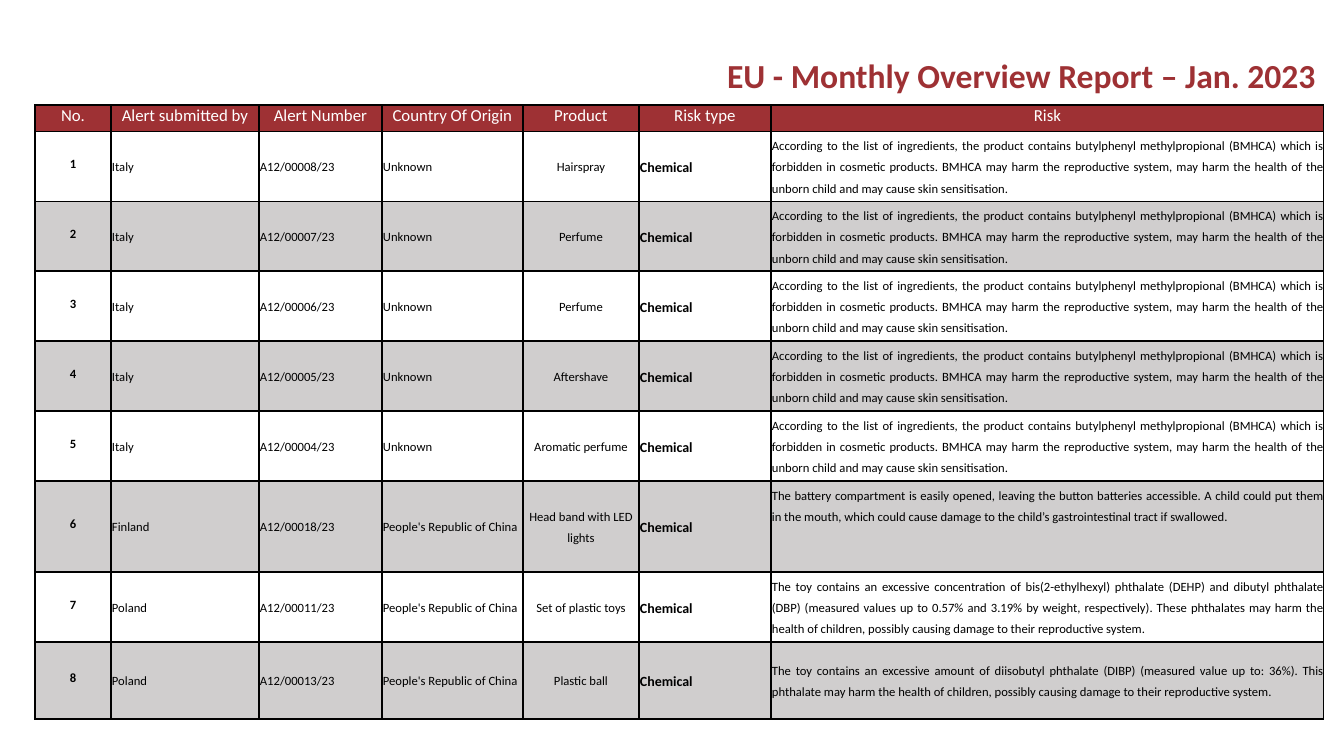
from dataclasses import dataclass

from lxml.etree import SubElement
from pptx import Presentation
from pptx.dml.color import RGBColor
from pptx.enum.text import MSO_ANCHOR, MSO_AUTO_SIZE, PP_ALIGN
from pptx.oxml.ns import qn
from pptx.util import Pt

# Content
TITLE = "EU - Monthly Overview Report – Jan. 2023"
HEADINGS = ["No.", "Alert submitted by", "Alert Number", "Country Of Origin",
            "Product", "Risk type", "Risk"]
CHINA = "People's Republic of China"
BMHCA = ("According to the list of ingredients, the product contains butylphenyl "
         "methylpropional (BMHCA) which is forbidden in cosmetic products. BMHCA may harm "
         "the reproductive system, may harm the health of the unborn child and may cause "
         "skin sensitisation.")
BATTERY = ("The battery compartment is easily opened, leaving the button batteries "
           "accessible. A child could put them in the mouth, which could cause damage to "
           "the child’s gastrointestinal tract if swallowed.")
DEHP = ("The toy contains an excessive concentration of bis(2-ethylhexyl) phthalate (DEHP) "
        "and dibutyl phthalate (DBP) (measured values up to 0.57% and 3.19% by weight, "
        "respectively). These phthalates may harm the health of children, possibly causing "
        "damage to their reproductive system.")
DIBP = ("The toy contains an excessive amount of diisobutyl phthalate (DIBP) (measured value "
        "up to: 36%). This phthalate may harm the health of children, possibly causing "
        "damage to their reproductive system.")
RISK_TYPE = "Chemical"
ALERTS = [  # submitted by, alert number, origin, product, risk
    ("Italy", "A12/00008/23", "Unknown", "Hairspray", BMHCA),
    ("Italy", "A12/00007/23", "Unknown", "Perfume", BMHCA),
    ("Italy", "A12/00006/23", "Unknown", "Perfume", BMHCA),
    ("Italy", "A12/00005/23", "Unknown", "Aftershave", BMHCA),
    ("Italy", "A12/00004/23", "Unknown", "Aromatic perfume", BMHCA),
    ("Finland", "A12/00018/23", CHINA, "Head band with LED lights", BATTERY),
    ("Poland", "A12/00011/23", CHINA, "Set of plastic toys", DEHP),
    ("Poland", "A12/00013/23", CHINA, "Plastic ball", DIBP),
]

# Layout in px
SLIDE_SIZE = (1344, 756)
EMU_PER_PX = 12192000 / SLIDE_SIZE[0]
TITLE_BOX = (717, 50, 609, 50)
TABLE_ORIGIN = (35, 105)
COLUMN_WIDTHS = [76, 148, 123, 141, 116, 132, 553]
ROW_HEIGHTS = [26, 70, 70, 70, 70, 70, 91, 70, 77]
CELL_MARGINS = {"margin_left": 1, "margin_right": 1, "margin_top": 1, "margin_bottom": 5}


@dataclass(frozen=True)
class Theme:
    font: str = "Calibri"
    red: str = "9E3134"
    white: str = "FFFFFF"
    black: str = "000000"
    grey: str = "D0CECE"
    title_size: int = 24
    heading_size: int = 12
    type_size: int = 10
    body_size: int = 9
    border_width: int = 1
    line_spacing: float = 1.4


THEME = Theme()
HEADING = {"size": THEME.heading_size, "color": THEME.white, "align": PP_ALIGN.CENTER}
BODY = {"size": THEME.body_size, "color": THEME.black, "align": PP_ALIGN.JUSTIFY,
        "spacing": THEME.line_spacing}
CENTRED = BODY | {"align": PP_ALIGN.CENTER}
NUMBER = CENTRED | {"bold": True, "spacing": 1.0}
RISK_TYPE_STYLE = BODY | {"size": THEME.type_size, "bold": True}
COLUMN_STYLES = [NUMBER, BODY, BODY, BODY, CENTRED, RISK_TYPE_STYLE, BODY]


def emu(px):
    return round(px * EMU_PER_PX)


def write(frame, text, style):
    para = frame.paragraphs[0]
    para.alignment = style["align"]
    para.line_spacing = style.get("spacing", 1.0)
    span = para.add_run()
    span.text = text
    values = {"name": THEME.font, "size": Pt(style["size"]), "bold": style.get("bold", False)}
    for name, value in values.items():
        setattr(span.font, name, value)
    span.font.color.rgb = RGBColor.from_string(style["color"])


def add_borders(cell):
    properties = cell._tc.get_or_add_tcPr()
    for side in ("a:lnL", "a:lnR", "a:lnT", "a:lnB"):
        line = SubElement(properties, qn(side), w=str(Pt(THEME.border_width)))
        fill = SubElement(line, qn("a:solidFill"))
        SubElement(fill, qn("a:srgbClr"), val=THEME.black)


def fill_cell(cell, text, style, color):
    add_borders(cell)
    if color:
        cell.fill.solid()
        cell.fill.fore_color.rgb = RGBColor.from_string(color)
    else:
        cell.fill.background()
    for name, px in CELL_MARGINS.items():
        setattr(cell, name, emu(px))
    # The battery note sits at the top of its taller row
    cell.vertical_anchor = MSO_ANCHOR.TOP if text == BATTERY else MSO_ANCHOR.MIDDLE
    write(cell.text_frame, text, style)


def add_title(slide):
    title = slide.shapes.title
    title.left, title.top, title.width, title.height = map(emu, TITLE_BOX)
    frame = title.text_frame
    settings = {"word_wrap": False, "vertical_anchor": MSO_ANCHOR.TOP,
                "auto_size": MSO_AUTO_SIZE.SHAPE_TO_FIT_TEXT}
    for name, value in settings.items():
        setattr(frame, name, value)
    write(frame, TITLE, {"size": THEME.title_size, "color": THEME.red,
                         "bold": True, "align": PP_ALIGN.LEFT})


def add_alert_table(slide):
    size = (sum(COLUMN_WIDTHS), sum(ROW_HEIGHTS))
    table = slide.shapes.add_table(len(ROW_HEIGHTS), len(COLUMN_WIDTHS),
                                   *map(emu, TABLE_ORIGIN + size)).table
    table.horz_banding = False
    table.first_row = False
    for column, width in zip(table.columns, COLUMN_WIDTHS):
        column.width = emu(width)
    for row, height in zip(table.rows, ROW_HEIGHTS):
        row.height = emu(height)

    # Heading row
    for cell, heading in zip(table.rows[0].cells, HEADINGS):
        fill_cell(cell, heading, HEADING, THEME.red)

    # Alert rows, every second one grey
    for number, (*facts, risk) in enumerate(ALERTS, start=1):
        texts = [str(number), *facts, RISK_TYPE, risk]
        color = None if number % 2 else THEME.grey
        for cell, text, style in zip(table.rows[number].cells, texts, COLUMN_STYLES):
            fill_cell(cell, text, style, color)


def main():
    deck = Presentation()
    deck.slide_width, deck.slide_height = map(emu, SLIDE_SIZE)
    page = deck.slides.add_slide(deck.slide_layouts[5])
    add_title(page)
    add_alert_table(page)
    deck.save("out.pptx")


if __name__ == "__main__":
    main()
